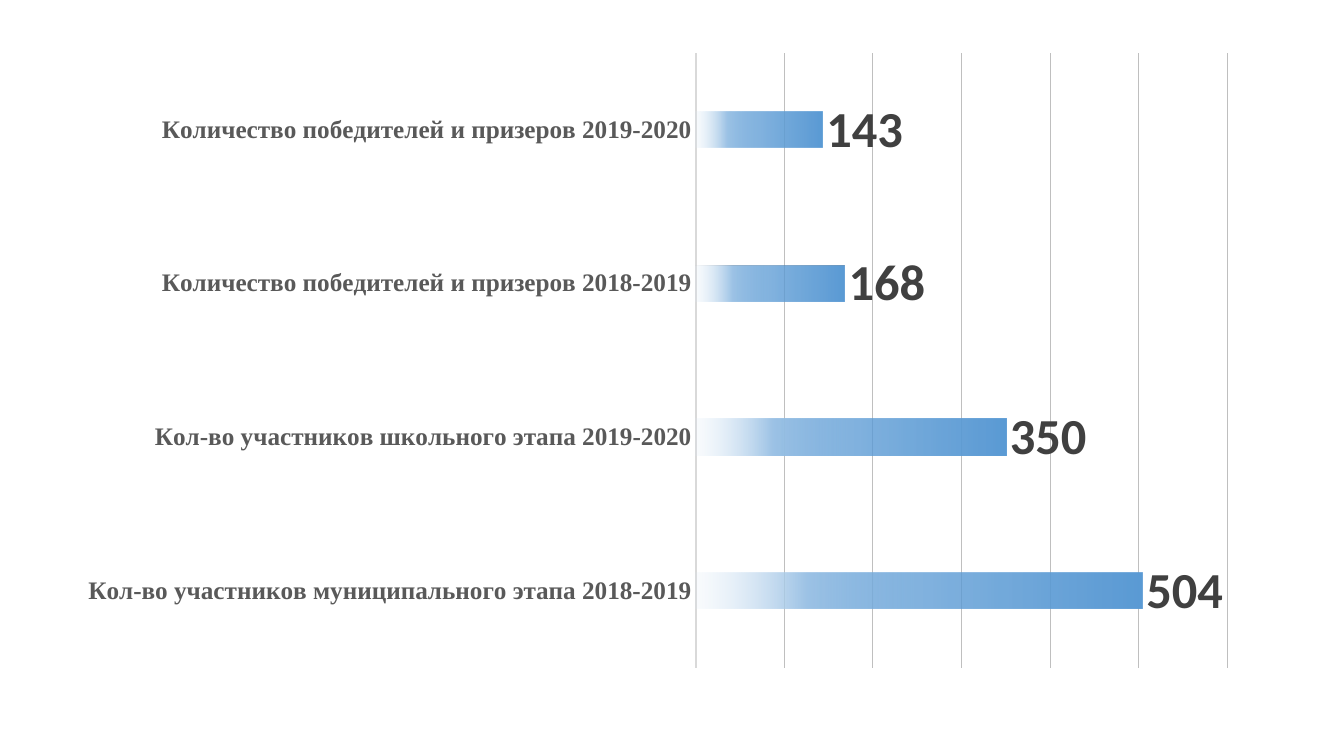
from lxml import etree
from pptx import Presentation, util as u
from pptx.chart.data import CategoryChartData
from pptx.dml.color import RGBColor
from pptx.enum import chart as ch
from pptx.oxml.ns import qn


def rgb(code):
    """Turn a hex string into a colour."""
    return RGBColor.from_string(code)


class Deck:
    """Holds the style and the current slide."""

    serif, sans = "Times New Roman", "Calibri"
    grey, dark, pale, grid = "595959", "404040", "D9D9D9", "BFBFBF"
    fade = [(0, "5B9BD5", 100), (51, "5B9BD5", 75),
            (75, "9DC3E6", 100), (100, "DEEBF7", 15)]

    def __init__(self):
        """Open a deck with one blank slide."""
        self.prs = Presentation()
        self.prs.slide_width = u.Inches(13.33)
        self.prs.slide_height = u.Inches(7.5)
        self.slide = self.prs.slides.add_slide(self.prs.slide_layouts[6])

    def type(self, font, name, size, color, bold=False):
        """Set the look of a font."""
        font.name, font.size, font.bold = name, u.Pt(size), bold
        font.color.rgb = rgb(color)

    def line(self, form, color, width):
        """Set the colour and width of a chart line."""
        form.line.color.rgb = rgb(color)
        form.line.width = u.Pt(width)

    def shade(self, form):
        """Fill a series with the fading blue, from right to left."""
        form.fill.gradient()
        form.fill.gradient_angle = 180
        stops = form.fill.gradient_stops._gsLst
        for old in list(stops):
            stops.remove(old)
        for pos, color, solid in self.fade:
            stop = etree.SubElement(stops, qn("a:gs"), pos=str(pos * 1000))
            tint = etree.SubElement(stop, qn("a:srgbClr"), val=color)
            if solid < 100:
                etree.SubElement(tint, qn("a:alpha"), val=str(solid * 1000))

    def bars(self, rows, left, top, width, height):
        """Draw a bar chart with value labels."""
        data = CategoryChartData()
        data.categories = [name for name, _ in rows]
        data.add_series("Series 1", [count for _, count in rows])
        chart = self.slide.shapes.add_chart(
            ch.XL_CHART_TYPE.BAR_CLUSTERED, u.Inches(left), u.Inches(top),
            u.Inches(width), u.Inches(height), data).chart
        chart.has_legend = chart.has_title = False
        self.type(chart.font, self.sans, 10, "000000")

        names = chart.category_axis
        names.major_tick_mark = names.minor_tick_mark = ch.XL_TICK_MARK.NONE
        self.type(names.tick_labels.font, self.serif, 18, self.grey, True)
        self.line(names.format, self.pale, 1.5)

        scale = chart.value_axis
        scale.visible = False
        scale.minimum_scale, scale.maximum_scale = 0, 600
        scale.major_unit = 100
        scale.has_major_gridlines = True
        self.line(scale.major_gridlines.format, self.grid, 0.75)

        plot = chart.plots[0]
        plot.gap_width, plot.overlap = 326, -58
        plot.vary_by_categories = False
        series = plot.series[0]
        series.invert_if_negative = False
        self.shade(series.format)
        labels = series.data_labels
        labels.show_value = True
        labels.position = ch.XL_LABEL_POSITION.OUTSIDE_END
        self.type(labels.font, self.sans, 36, self.dark, True)


def main():
    """Build the slide and save it."""
    deck = Deck()
    deck.bars([
        ("Кол-во участников муниципального этапа 2018-2019", 504),
        ("Кол-во участников школьного этапа 2019-2020", 350),
        ("Количество победителей и призеров 2018-2019", 168),
        ("Количество победителей и призеров 2019-2020", 143),
    ], 0.64, 0.4, 11.77, 6.35)
    deck.prs.save("out.pptx")


if __name__ == "__main__":
    main()
